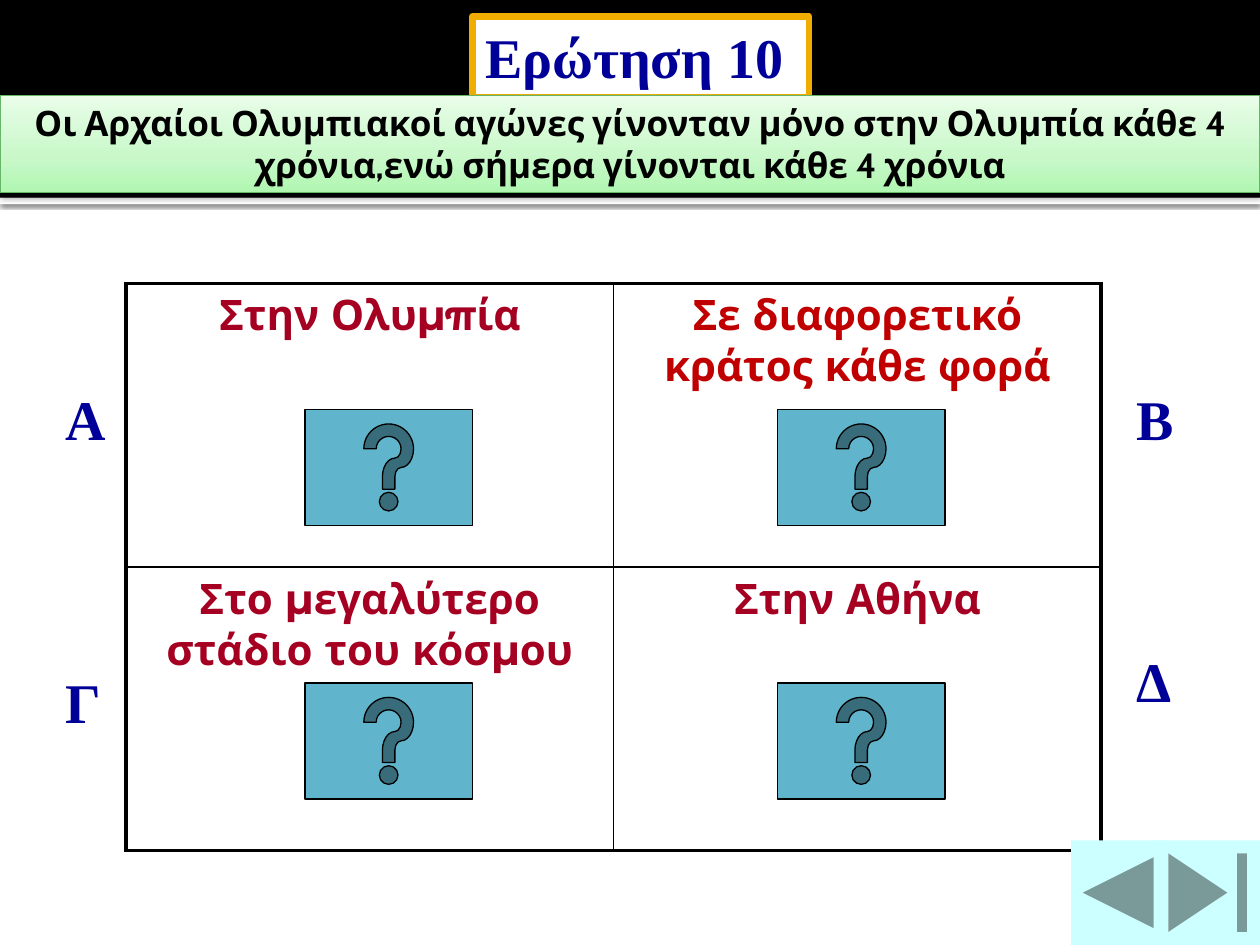
from lxml import etree
from copy import deepcopy
from pptx import Presentation
from pptx.dml.color import RGBColor
from pptx.enum.shapes import MSO_SHAPE as Shape
from pptx.enum.text import MSO_ANCHOR as Anchor, MSO_AUTO_SIZE as AutoSize, PP_ALIGN as Align
from pptx.oxml.ns import qn
from pptx.util import Inches, Pt

BLACK = RGBColor(0x00, 0x00, 0x00)
WHITE = RGBColor(0xFF, 0xFF, 0xFF)
NAVY = RGBColor(0x00, 0x00, 0x99)
GOLD = RGBColor(0xF0, 0xAD, 0x00)
CRIMSON = RGBColor(0xA5, 0x00, 0x21)
RED = RGBColor(0xC0, 0x00, 0x00)
BUTTON_BLUE = RGBColor(0x60, 0xB5, 0xCC)
PALE_CYAN = RGBColor(0xCC, 0xFF, 0xFF)
GREEN_LINE = RGBColor(0x67, 0xB5, 0x69)
GREENS = [(0, RGBColor(0xB0, 0xF6, 0xB1)), (0.35, RGBColor(0xC8, 0xF8, 0xC8)),
          (1, RGBColor(0xE9, 0xFD, 0xE9))]

SERIF, ANSWER_FONT, QUESTION_FONT = "Times New Roman", "Montserrat", "Cabin"
THICK, THIN = 2.25, 1


class QuizSlide:
    def __init__(self, slide):
        self.slide = slide

    def set_text(self, frame, text, font, size, color, align=Align.LEFT):
        frame.word_wrap = True
        frame.vertical_anchor = Anchor.TOP
        paragraph = frame.paragraphs[0]
        paragraph.text = text
        paragraph.alignment = align
        paragraph.font.name = font
        paragraph.font.size = Pt(size)
        paragraph.font.bold = True
        paragraph.font.color.rgb = color

    def outline(self, shape, color, width):
        shape.line.color.rgb = color
        shape.line.width = Pt(width)

    def box(self, kind, left, top, width, height, fill=None, line=None):
        shape = self.slide.shapes.add_shape(
            kind, Inches(left), Inches(top), Inches(width), Inches(height))
        shape.shadow.inherit = False
        if fill is not None:
            shape.fill.solid()
            shape.fill.fore_color.rgb = fill
        if line is not None:
            self.outline(shape, *line)
        else:
            shape.line.fill.background()
        return shape

    def drop_shadow(self, shape, opacity, blur, distance):
        effects = shape.element.spPr.find(qn("a:effectLst"))
        shadow = etree.SubElement(effects, qn("a:outerShdw"), blurRad=str(Pt(blur)),
                                  dist=str(Pt(distance)), dir="5400000", rotWithShape="0")
        color = etree.SubElement(shadow, qn("a:srgbClr"), val=str(BLACK))
        etree.SubElement(color, qn("a:alpha"), val=str(opacity * 1000))

    def gradient(self, shape, stops):
        shape.fill.gradient()
        shape.fill.gradient_angle = 90
        stop_list = shape.element.spPr.find(qn("a:gradFill")).find(qn("a:gsLst"))
        stop_list.insert(1, deepcopy(stop_list[0]))
        for stop, (position, color) in zip(shape.fill.gradient_stops, stops):
            stop.position = position
            stop.color.rgb = color

    def title(self, text, left, top, width, height):
        title = self.slide.shapes.title
        title.left, title.top = Inches(left), Inches(top)
        title.width, title.height = Inches(width), Inches(height)
        title.fill.solid()
        title.fill.fore_color.rgb = WHITE
        self.outline(title, GOLD, 3.78)
        self.set_text(title.text_frame, text, SERIF, 32, NAVY)
        title.text_frame.auto_size = AutoSize.NONE
        # Bring the title in front of the header band
        title.element.getparent().append(title.element)

    def label(self, text, left, top):
        box = self.slide.shapes.add_textbox(
            Inches(left), Inches(top), Inches(0.5), Inches(0.63))
        self.set_text(box.text_frame, text, SERIF, 32, NAVY)

    def borders(self, cell, widths):
        properties = cell._tc.get_or_add_tcPr()
        for index, (side, width) in enumerate(zip("LRTB", widths)):
            line = etree.Element(qn(f"a:ln{side}"), w=str(Pt(width)))
            fill = etree.SubElement(line, qn("a:solidFill"))
            etree.SubElement(fill, qn("a:srgbClr"), val=str(BLACK))
            properties.insert(index, line)

    def answers(self, rows, left, top, column_width, row_height):
        last_row, last_column = len(rows) - 1, len(rows[0]) - 1
        table = self.slide.shapes.add_table(
            len(rows), len(rows[0]), Inches(left), Inches(top),
            Inches(column_width * len(rows[0])), Inches(row_height * len(rows))).table
        for row, answers in enumerate(rows):
            for column, (text, color) in enumerate(answers):
                cell = table.cell(row, column)
                cell.fill.solid()
                cell.fill.fore_color.rgb = WHITE
                self.set_text(cell.text_frame, text, ANSWER_FONT, 24, color, Align.CENTER)
                outer = (column == 0, column == last_column, row == 0, row == last_row)
                self.borders(cell, [THICK if edge else THIN for edge in outer])


def main():
    presentation = Presentation()
    presentation.slide_width, presentation.slide_height = Inches(10), Inches(7.5)
    quiz = QuizSlide(presentation.slides.add_slide(presentation.slide_layouts[5]))

    # Header band
    strip = quiz.box(Shape.RECTANGLE, 0, 1.57, 10, 0.05, WHITE)
    quiz.drop_shadow(strip, 60, 2.5, 0.8)
    quiz.box(Shape.RECTANGLE, 0, 0, 10, 1.57, BLACK)

    # Answer grid
    quiz.answers([
        [("Στην Ολυμπία", CRIMSON), ("Σε διαφορετικό κράτος κάθε φορά", RED)],
        [("Στο μεγαλύτερο στάδιο του κόσμου", CRIMSON), ("Στην Αθήνα", CRIMSON)],
    ], 1, 2.25, 3.87, 2.25)

    # Answer letters
    for letter, left, top in [("Α", 0.42, 3), ("Γ", 0.42, 5.25),
                              ("Β", 8.92, 3), ("Δ", 8.92, 5.08)]:
        quiz.label(letter, left, top)

    quiz.title("Ερώτηση 10", 3.75, 0.13, 2.67, 0.64)

    # Help buttons, one per answer
    for top in (3.25, 5.42):
        for left in (2.42, 6.17):
            quiz.box(Shape.ACTION_BUTTON_HELP, left, top, 1.33, 0.92,
                     BUTTON_BLUE, (BLACK, 0.75))

    # Navigation buttons
    quiz.box(Shape.ACTION_BUTTON_END, 9.17, 6.67, 0.83, 0.83, PALE_CYAN)
    quiz.box(Shape.ACTION_BUTTON_BACK_OR_PREVIOUS, 8.5, 6.67, 0.75, 0.83, PALE_CYAN)

    # Question
    question = quiz.box(Shape.RECTANGLE, 0, 0.76, 10, 0.77, line=(GREEN_LINE, 0.5))
    quiz.gradient(question, GREENS)
    quiz.drop_shadow(question, 38, 3.5, 2)
    quiz.set_text(question.text_frame,
                  "Οι Αρχαίοι Ολυμπιακοί αγώνες γίνονταν μόνο στην Ολυμπία κάθε 4 "
                  "χρόνια,ενώ σήμερα γίνονται κάθε 4 χρόνια",
                  QUESTION_FONT, 20, BLACK, Align.CENTER)

    presentation.save("out.pptx")


if __name__ == "__main__":
    main()
